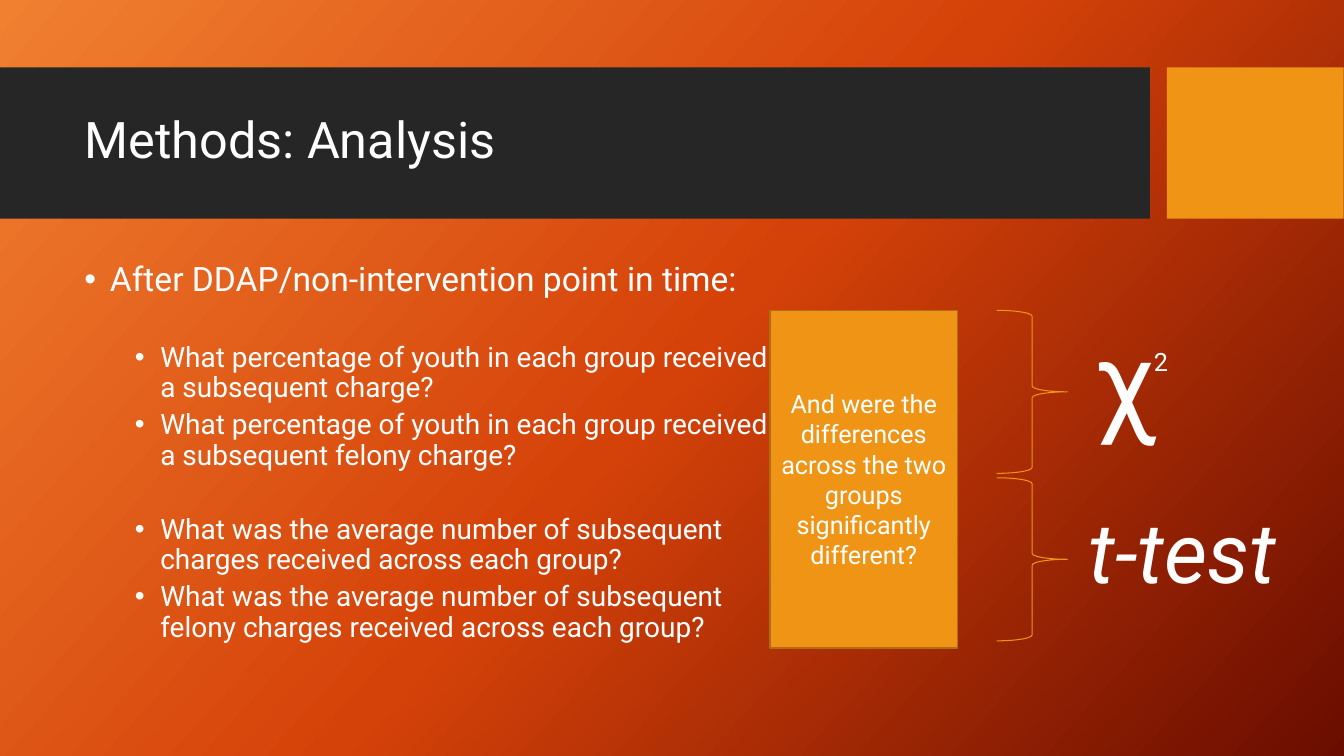
import copy

from lxml import etree
from pptx import Presentation
from pptx.dml.color import RGBColor
from pptx.enum.shapes import MSO_SHAPE
from pptx.enum.text import MSO_ANCHOR, PP_ALIGN
from pptx.oxml.ns import qn
from pptx.util import Cm, Pt

RECTANGLE = MSO_SHAPE.RECTANGLE
RIGHT_BRACE = MSO_SHAPE.RIGHT_BRACE
MIDDLE = MSO_ANCHOR.MIDDLE
TOP = MSO_ANCHOR.TOP
CENTER = PP_ALIGN.CENTER

FONT = "Roboto"
COLORS = {
    "white": "FFFFFF",
    "band": "262626",
    "amber": "F09415",
    "amber_edge": "B26D10",
}
BACKGROUND_STOPS = [(0, "F18031"), (0.5, "D54209"), (1, "6A0D00")]
BACKGROUND_ANGLE = 318

# Each question: text, space before in points
HEADING = "After DDAP/non-intervention point in time:"
QUESTIONS = [
    ("What percentage of youth in each group received a subsequent charge?", 31.5),
    ("What percentage of youth in each group received a subsequent felony charge?", 5),
    ("What was the average number of subsequent charges received across each group?", 31.5),
    ("What was the average number of subsequent felony charges received across each group?", 5),
]


def rgb(name):
    return RGBColor.from_string(COLORS[name])


def paint_background(slide):
    fill = slide.background.fill
    fill.gradient()
    fill.gradient_angle = BACKGROUND_ANGLE
    # A new gradient has two stops, so one more is added
    stop_list = slide.element.find(".//" + qn("a:gsLst"))
    stop_list.append(copy.deepcopy(stop_list[-1]))
    for stop, (position, color) in zip(fill.gradient_stops, BACKGROUND_STOPS):
        stop.position = position
        stop.color.rgb = RGBColor.from_string(color)


def add_shape(slide, kind, left, top, width, height, fill=None, line=None, line_width=0.75):
    shape = slide.shapes.add_shape(kind, Cm(left), Cm(top), Cm(width), Cm(height))
    shape.shadow.inherit = False
    if fill:
        shape.fill.solid()
        shape.fill.fore_color.rgb = rgb(fill)
    else:
        shape.fill.background()
    if line:
        shape.line.color.rgb = rgb(line)
        shape.line.width = Pt(line_width)
    else:
        shape.line.fill.background()
    return shape


def format_font(paragraph, size, italic=False):
    for run in paragraph.runs:
        run.font.name = FONT
        run.font.size = Pt(size)
        run.font.italic = italic
        run.font.color.rgb = rgb("white")


def add_text(slide, text, left, top, width, height, size, anchor=TOP, italic=False):
    box = slide.shapes.add_textbox(Cm(left), Cm(top), Cm(width), Cm(height))
    text_frame = box.text_frame
    text_frame.word_wrap = True
    text_frame.vertical_anchor = anchor
    text_frame.text = text
    format_font(text_frame.paragraphs[0], size, italic)
    return text_frame


def make_bullet(paragraph, margin, level=0):
    paragraph.level = level
    paragraph.line_spacing = 0.9
    properties = paragraph._p.get_or_add_pPr()
    properties.set("marL", str(Cm(margin)))
    properties.set("indent", str(-Cm(0.64)))
    bullet_font = etree.SubElement(properties, qn("a:buFont"))
    bullet_font.set("typeface", "Arial")
    bullet = etree.SubElement(properties, qn("a:buChar"))
    bullet.set("char", "•")


def add_questions(slide):
    text_frame = add_text(slide, HEADING, 1.88, 6.5, 17.73, 10, 24)
    make_bullet(text_frame.paragraphs[0], 0.64)
    for question, space_before in QUESTIONS:
        paragraph = text_frame.add_paragraph()
        paragraph.text = question
        make_bullet(paragraph, 1.91, level=1)
        paragraph.space_before = Pt(space_before)
        format_font(paragraph, 20)


def add_callout(slide):
    callout = add_shape(slide, RECTANGLE, 19.41, 7.82, 4.72, 8.51, "amber", "amber_edge", 1)
    text_frame = callout.text_frame
    text_frame.word_wrap = True
    text_frame.vertical_anchor = MIDDLE
    text_frame.text = "And were the differences across the two groups significantly different?"
    text_frame.paragraphs[0].alignment = CENTER
    format_font(text_frame.paragraphs[0], 18)


def main():
    presentation = Presentation()
    presentation.slide_width = Cm(33.87)
    presentation.slide_height = Cm(19.05)
    slide = presentation.slides.add_slide(presentation.slide_layouts[6])
    paint_background(slide)

    # Title band
    add_shape(slide, RECTANGLE, 0, 1.7, 28.98, 3.81, "band")
    add_shape(slide, RECTANGLE, 29.41, 1.7, 4.45, 3.81, "amber")
    title = add_text(slide, "Methods: Analysis", 1.88, 2.08, 26.7, 3, 36, MIDDLE)
    title.paragraphs[0].line_spacing = 0.9

    # Questions
    add_questions(slide)

    # Braces and the test for each pair of questions
    for brace_top in (7.82, 12.04):
        add_shape(slide, RIGHT_BRACE, 25.12, brace_top, 1.78, 4.11, line="amber")
    add_text(slide, "χ", 27.33, 7.7, 2.08, 3.68, 80)
    add_text(slide, "2", 28.83, 8.59, 1.17, 1.02, 18)
    add_text(slide, "t-test", 27.18, 12.47, 8.03, 2.82, 60, italic=True)

    # Callout
    add_callout(slide)

    presentation.save("out.pptx")


if __name__ == "__main__":
    main()
